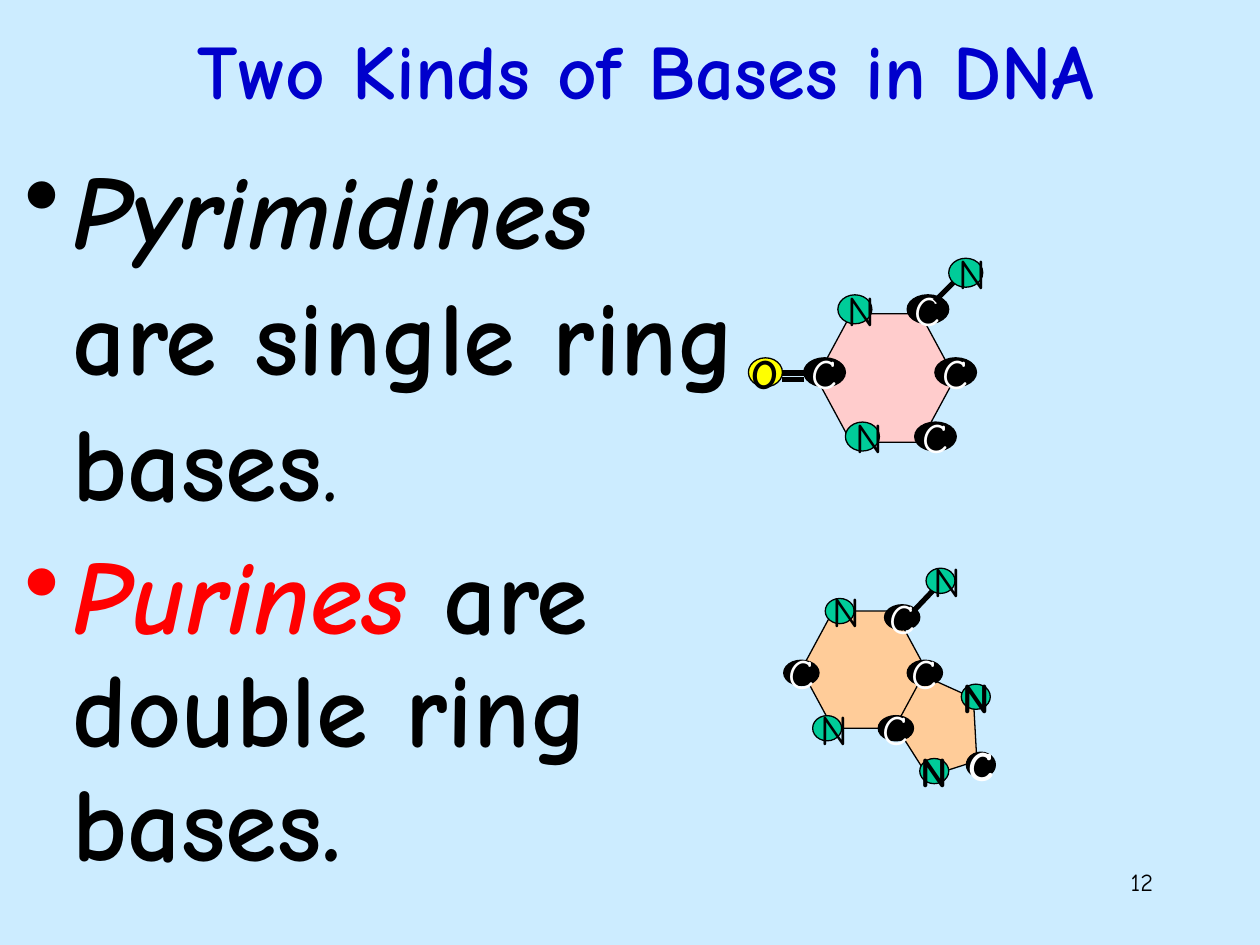
"""Build a slide that compares the pyrimidine and purine bases of DNA."""
from lxml import etree
from pptx import Presentation
from pptx.dml.color import RGBColor
from pptx.enum.shapes import MSO_CONNECTOR, MSO_SHAPE
from pptx.enum.text import MSO_ANCHOR, PP_ALIGN
from pptx.oxml.ns import qn
from pptx.util import Inches, Pt

STRAIGHT = MSO_CONNECTOR.STRAIGHT
HEXAGON, PENTAGON, OVAL = MSO_SHAPE.HEXAGON, MSO_SHAPE.REGULAR_PENTAGON, MSO_SHAPE.OVAL
TOP, MIDDLE = MSO_ANCHOR.TOP, MSO_ANCHOR.MIDDLE
LEFT, CENTER, RIGHT = PP_ALIGN.LEFT, PP_ALIGN.CENTER, PP_ALIGN.RIGHT
SKY = RGBColor(0xCC, 0xEC, 0xFF)
BLUE = RGBColor(0x00, 0x00, 0xCC)
RED = RGBColor(0xFF, 0x00, 0x00)
BLACK = RGBColor(0x00, 0x00, 0x00)
WHITE = RGBColor(0xFF, 0xFF, 0xFF)
GREEN = RGBColor(0x00, 0xCC, 0x99)
YELLOW = RGBColor(0xFF, 0xFF, 0x00)
PINK = RGBColor(0xFF, 0xCC, 0xCC)
ORANGE = RGBColor(0xFF, 0xCC, 0x99)
FONT = "Comic Neue"
ATOM_COLORS = {"C": (BLACK, WHITE), "N": (GREEN, BLACK), "O": (YELLOW, BLACK)}

presentation = Presentation()
presentation.slide_width = Inches(10)
presentation.slide_height = Inches(7.5)
CELL = presentation.slide_width / 100
slide = presentation.slides.add_slide(presentation.slide_layouts[6])
slide.background.fill.solid()
slide.background.fill.fore_color.rgb = SKY


def add_run(paragraph, text, size, color, bold=False, italic=False):
    run = paragraph.add_run()
    run.text = text
    run.font.name = FONT
    run.font.size = Pt(size)
    run.font.color.rgb = color
    run.font.bold = bold
    run.font.italic = italic


def add_outlined(shapes, kind, box, fill):
    shape = shapes.add_shape(kind, *[round(cells * CELL) for cells in box])
    shape.shadow.inherit = False
    shape.fill.solid()
    shape.fill.fore_color.rgb = fill
    shape.line.color.rgb = BLACK
    shape.line.width = Pt(0.75)
    return shape


text_blocks = [
    ((71.7, 68.3, 20.8, 5), TOP, RIGHT, [[("12", 14, BLACK)]]),
    ((8.8, -0.8, 85, 12.5), MIDDLE, CENTER,
     [[("Two Kinds of Bases in DNA", 44, BLUE, True)]]),
    ((1, 11, 59.7, 62.3), TOP, LEFT,
     [[("Pyrimidines", 60, BLACK, True, True),
       (" are single ring bases", 60, BLACK, True),
       (".", 60, BLACK)],
      [("Purines", 60, RED, True, True),
       (" are double ring bases.", 60, BLACK, True)]]),
]
for box, anchor, alignment, paragraphs in text_blocks:
    text_box = slide.shapes.add_textbox(*[round(cells * CELL) for cells in box])
    frame = text_box.text_frame
    frame.word_wrap = True
    frame.vertical_anchor = anchor
    for index, runs in enumerate(paragraphs):
        paragraph = frame.add_paragraph() if index else frame.paragraphs[0]
        paragraph.alignment = alignment
        for run in runs:
            add_run(paragraph, *run)

for paragraph in frame.paragraphs:
    paragraph.space_before = Pt(12)
    properties = paragraph._p.get_or_add_pPr()
    properties.set("marL", str(Inches(0.38)))
    properties.set("indent", str(-Inches(0.38)))
    etree.SubElement(properties, qn("a:buChar")).set("char", "•")
frame.paragraphs[1].line_spacing = 0.9

pyrimidine = {
    "shapes": slide.shapes,
    "rings": [(HEXAGON, (64.8, 24.9, 11, 10.2), PINK, 0)],
    "atom_size": (3.3, 2.7, 2.3),
    "ring_atoms": [("C", 72, 23.4), ("C", 74.2, 28.4), ("C", 72.6, 33.5),
                   ("C", 63.8, 28.4), (" N", 67.1, 33.5), (" N", 66.5, 23.4)],
    "bonds": [(74.2, 23.9, 77, 21.1), (63.8, 29.6, 62.1, 29.6),
              (63.8, 30.1, 62.1, 30.1)],
    "outer_atoms": [("O", 59.4, 28.4, True), (" N", 75.3, 20.5)],
}
purine = {
    "shapes": slide.shapes.add_group_shape().shapes,
    "rings": [(PENTAGON, (71.1, 53.4, 6.6, 7.8), ORANGE, 342.2),
              (HEXAGON, (63.6, 48.5, 9.9, 9.3), ORANGE, 0)],
    "atom_size": (2.8, 2.3, 2),
    "ring_atoms": [("C", 70.2, 48), ("C", 72, 52.4), ("C", 69.7, 56.8),
                   ("C", 62.2, 52.4), (" N", 65.5, 47.5), (" N", 64.5, 56.8)],
    "bonds": [(72.5, 48.5, 74.4, 46.5)],
    "outer_atoms": [(" N", 73.5, 45.1), ("N", 73, 60.2, True),
                    ("N", 76.3, 54.3, True), ("C", 76.7, 59.7, True)],
}
for molecule in (pyrimidine, purine):
    shapes = molecule["shapes"]
    wide, narrow, height = molecule["atom_size"]
    for kind, box, fill, rotation in molecule["rings"]:
        ring = add_outlined(shapes, kind, box, fill)
        ring.rotation = rotation
        if kind == HEXAGON:
            ring.adjustments[0] = 0.27
    for atoms, bonds in ((molecule["ring_atoms"], molecule["bonds"]),
                         (molecule["outer_atoms"], [])):
        for symbol, left, top, *bold in atoms:
            fill, color = ATOM_COLORS[symbol.strip()]
            width = wide if symbol == "C" and not bold else narrow
            atom = add_outlined(shapes, OVAL, (left, top, width, height), fill)
            frame = atom.text_frame
            frame.word_wrap = False
            frame.vertical_anchor = MIDDLE
            frame.paragraphs[0].alignment = CENTER
            add_run(frame.paragraphs[0], symbol, 24, color, bool(bold))
        for ends in bonds:
            bond = shapes.add_connector(STRAIGHT, *[round(cells * CELL) for cells in ends])
            bond.line.color.rgb = BLACK
            bond.line.width = Pt(3)
            etree.SubElement(bond._element.spPr, qn("a:effectLst"))

presentation.save("out.pptx")
